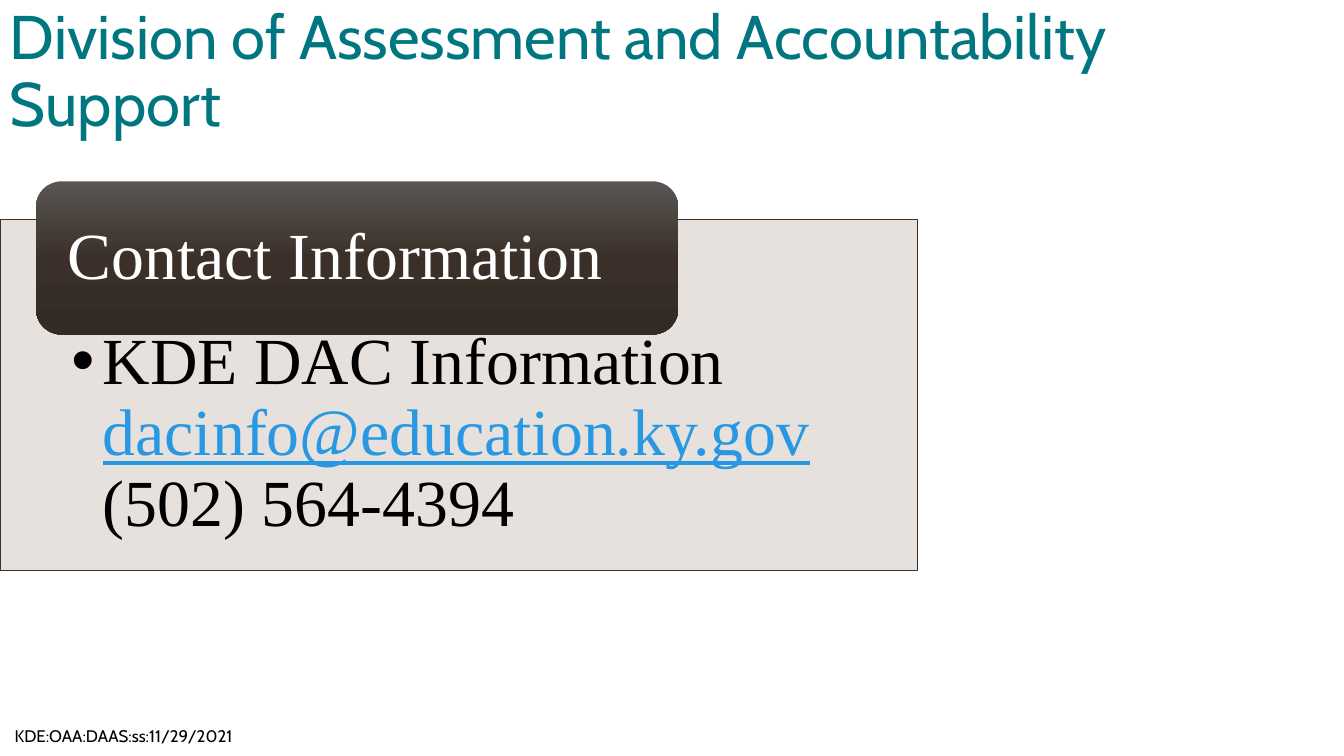
"""Build the contact slide of the Division of Assessment and Accountability Support."""
from copy import deepcopy

from lxml import etree
from pptx import Presentation
from pptx.dml.color import RGBColor
from pptx.enum.shapes import MSO_SHAPE
from pptx.enum.text import MSO_ANCHOR, MSO_AUTO_SIZE, PP_ALIGN
from pptx.oxml.ns import qn
from pptx.util import Cm, Pt

ROUNDED = MSO_SHAPE.ROUNDED_RECTANGLE
MIDDLE, TOP = MSO_ANCHOR.MIDDLE, MSO_ANCHOR.TOP
LEFT, CENTER = PP_ALIGN.LEFT, PP_ALIGN.CENTER
NO_FIT = MSO_AUTO_SIZE.NONE

HEADING = "Division of Assessment and Accountability Support"
BANNER = "Contact Information"
CONTACT = [
    ("KDE DAC Information ", "text", False),
    ("dacinfo@education.ky.gov", "link", True),
    (" (502) 564-4394", "text", False),
]
FOOTNOTE = "KDE:OAA:DAAS:ss:11/29/2021"

COLORS = {
    "heading": "007780", "text": "000000", "link": "2998E3", "white": "FFFFFF",
    "panel": "E5DEDB", "border": "39302A",
}
BANNER_STOPS = [(0, "5A5653"), (50, "3A3029"), (100, "342A24")]
SANS, SERIF = "Cabin", "Times New Roman"

HEADING_BOX = (0, 0, 29.21, 3.68)
PANEL_BOX = (0, 5.54, 23.11, 8.84)
BANNER_BOX = (0.91, 4.57, 16.18, 3.86)
FOOTNOTE_BOX = (-0.53, 18.03, 7.29, 1.02)
INDENT = Cm(0.79)


def rgb(name):
    return RGBColor.from_string(COLORS[name])


def place(part, box):
    part.left, part.top, part.width, part.height = map(Cm, box)


def set_frame(part, anchor, insets=(0.25, 0.13, 0.25, 0.13)):
    frame = part.text_frame
    frame.word_wrap = True
    frame.auto_size = NO_FIT
    frame.vertical_anchor = anchor
    frame.margin_left, frame.margin_top, frame.margin_right, frame.margin_bottom = map(Cm, insets)
    return frame.paragraphs[0]


def style(paragraph, size, face, color=None, align=LEFT, spacing=0.9):
    paragraph.alignment = align
    paragraph.line_spacing = spacing
    paragraph.space_before = Pt(0)
    paragraph.font.size = Pt(size)
    paragraph.font.name = face
    if color:
        paragraph.font.color.rgb = rgb(color)


def fill_gradient(part, stops):
    part.fill.gradient()
    part.fill.gradient_angle = 270
    stop_list = part.fill._fill._gradFill.find(qn("a:gsLst"))
    stop_list.append(deepcopy(stop_list[-1]))
    for stop, (position, color) in zip(part.fill.gradient_stops, stops):
        stop.position = position / 100
        stop.color.rgb = RGBColor.from_string(color)


def add_bullet(paragraph):
    properties = paragraph._p.get_or_add_pPr()
    properties.set("marL", str(INDENT))
    properties.set("indent", str(-INDENT))
    etree.SubElement(properties, qn("a:buChar")).set("char", "•")


def main():
    deck = Presentation()
    deck.slide_width, deck.slide_height = Cm(33.87), Cm(19.05)
    slide = deck.slides.add_slide(deck.slide_layouts[1])
    heading, panel = slide.placeholders

    place(heading, HEADING_BOX)
    line = set_frame(heading, MIDDLE)
    line.text = HEADING
    style(line, 44, SANS, "heading")

    place(panel, PANEL_BOX)
    panel.fill.solid()
    panel.fill.fore_color.rgb = rgb("panel")
    panel_color = panel.fill._xPr.find(qn("a:solidFill"))[0]
    etree.SubElement(panel_color, qn("a:alpha")).set("val", "90000")
    panel.line.color.rgb = rgb("border")
    panel.line.width = Pt(0.5)
    line = set_frame(panel, TOP, (1.8, 2.72, 1.8, 0.94))
    add_bullet(line)
    style(line, 47, SERIF)
    for text, color, underlined in CONTACT:
        run = line.add_run()
        run.text = text
        run.font.color.rgb = rgb(color)
        run.font.underline = underlined

    banner = slide.shapes.add_shape(ROUNDED, *map(Cm, BANNER_BOX))
    banner.shadow.inherit = False
    banner.line.fill.background()
    fill_gradient(banner, BANNER_STOPS)
    line = set_frame(banner, MIDDLE, (0.61, 0, 0.61, 0))
    line.text = BANNER
    style(line, 47, SERIF, "white")

    footnote = slide.shapes.add_textbox(*map(Cm, FOOTNOTE_BOX))
    line = set_frame(footnote, MIDDLE)
    line.text = FOOTNOTE
    style(line, 12, SANS, "text", CENTER, 1.0)

    deck.save("out.pptx")


if __name__ == "__main__":
    main()
